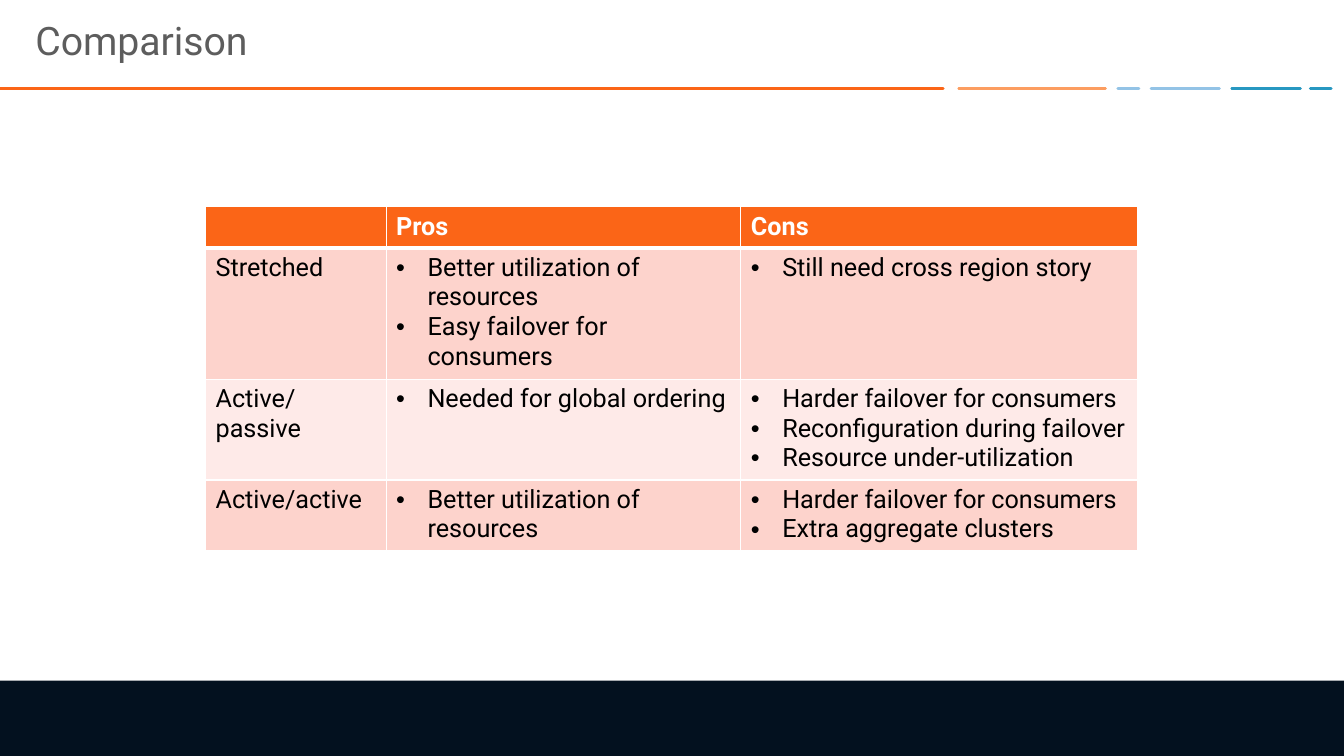
from lxml.etree import SubElement
from pptx import Presentation
from pptx.dml.color import RGBColor
from pptx.enum.shapes import MSO_CONNECTOR, MSO_SHAPE
from pptx.enum.text import MSO_ANCHOR
from pptx.oxml import parse_xml
from pptx.oxml.ns import nsdecls, qn
from pptx.util import Cm, Pt

COLORS = {
    "footer": "03111F", "orange": "FB6517", "light orange": "FC9D60",
    "light blue": "93C3E6", "teal": "2898C1", "title": "5D5D5D",
    "white": "FFFFFF", "black": "000000", "odd row": "FDD3CC", "even row": "FEEAE8",
}
TITLE_FONT = {"name": "Roboto", "size": Pt(28), "bold": False}
HEADER_FONT = {"name": "Roboto", "size": Pt(18), "bold": True}
BODY_FONT = {"name": "Roboto", "size": Pt(18), "bold": False}

# Start, end and colour of each dash under the title
DASHES = [
    (0, 23.77, "orange"), (24.16, 27.86, "light orange"),
    (28.17, 28.7, "light blue"), (29.01, 30.73, "light blue"),
    (31.04, 32.77, "teal"), (33.02, 33.55, "teal"),
]
COLUMN_WIDTHS = [4.55, 8.94, 10.01]
ROW_HEIGHTS = [1.04, 3.23, 2.49, 1.74]
HEADINGS = ["", "Pros", "Cons"]
STRATEGIES = [
    ("Stretched",
     ["Better utilization of resources", "Easy failover for consumers"],
     ["Still need cross region story"]),
    ("Active/passive",
     ["Needed for global ordering"],
     ["Harder failover for consumers", "Reconfiguration during failover",
      "Resource under-utilization"]),
    ("Active/active",
     ["Better utilization of resources"],
     ["Harder failover for consumers", "Extra aggregate clusters"]),
]


def rgb(color):
    return RGBColor.from_string(COLORS[color])


def format_font(paragraph, settings, color):
    for attribute, value in settings.items():
        setattr(paragraph.font, attribute, value)
    paragraph.font.color.rgb = rgb(color)


def add_footer(slide):
    footer = slide.shapes.add_shape(
        MSO_SHAPE.RECTANGLE, 0, Cm(17.15), Cm(33.87), Cm(1.9))
    footer.shadow.inherit = False
    footer.fill.solid()
    footer.fill.fore_color.rgb = rgb("footer")
    footer.line.fill.background()


def add_dash(slide, start, end, color):
    dash = slide.shapes.add_connector(
        MSO_CONNECTOR.STRAIGHT, Cm(start), Cm(2.23), Cm(end), Cm(2.23))
    dash.line.color.rgb = rgb(color)
    dash.line.width = Pt(2)
    dash.line._get_or_add_ln().set("cap", "rnd")
    SubElement(dash._element.spPr, qn("a:effectLst"))


def add_title(slide, text):
    title = slide.shapes.add_textbox(Cm(0.89), 0, Cm(32.13), Cm(2.16))
    frame = title.text_frame
    settings = {"word_wrap": True, "vertical_anchor": MSO_ANCHOR.MIDDLE,
                "margin_left": 0, "margin_right": 0}
    for attribute, value in settings.items():
        setattr(frame, attribute, value)
    paragraph = frame.paragraphs[0]
    paragraph.text = text
    paragraph.line_spacing = 0.9
    format_font(paragraph, TITLE_FONT, "title")


def add_bullet(paragraph):
    properties = paragraph._p.get_or_add_pPr()
    properties.set("marL", str(Cm(0.79)))
    properties.set("indent", str(-Cm(0.79)))
    SubElement(properties, qn("a:buFont"), typeface="Arial")
    SubElement(properties, qn("a:buChar"), char="•")


def add_borders(cell, top, bottom):
    properties = cell._tc.get_or_add_tcPr()
    widths = {"lnL": 1, "lnR": 1, "lnT": top, "lnB": bottom}
    for position, (side, width) in enumerate(widths.items()):
        properties.insert(position, parse_xml(
            f'<a:{side} {nsdecls("a")} w="{Pt(width)}"><a:solidFill>'
            f'<a:srgbClr val="{COLORS["white"]}"/></a:solidFill></a:{side}>'))


def fill_cell(cell, lines, fill, settings, color, bulleted):
    cell.fill.solid()
    cell.fill.fore_color.rgb = rgb(fill)
    cell.text = "\n".join(lines)
    for paragraph in cell.text_frame.paragraphs:
        if bulleted:
            add_bullet(paragraph)
        format_font(paragraph, settings, color)


def add_comparison(slide):
    comparison = slide.shapes.add_table(
        len(ROW_HEIGHTS), len(COLUMN_WIDTHS), Cm(5.18), Cm(5.21),
        Cm(sum(COLUMN_WIDTHS)), Cm(sum(ROW_HEIGHTS))).table
    for column, width in zip(comparison.columns, COLUMN_WIDTHS):
        column.width = Cm(width)
    for row, height in zip(comparison.rows, ROW_HEIGHTS):
        row.height = Cm(height)

    # Header row
    for column, heading in enumerate(HEADINGS):
        cell = comparison.cell(0, column)
        fill_cell(cell, [heading], "orange", HEADER_FONT, "white", False)
        add_borders(cell, 1, 3)

    # One row per strategy
    for row, (strategy, pros, cons) in enumerate(STRATEGIES, 1):
        fill = "odd row" if row % 2 else "even row"
        for column, lines in enumerate([[strategy], pros, cons]):
            cell = comparison.cell(row, column)
            fill_cell(cell, lines, fill, BODY_FONT, "black", column > 0)
            add_borders(cell, 3 if row == 1 else 1, 1)


def main():
    presentation = Presentation()
    presentation.slide_width = Cm(33.87)
    presentation.slide_height = Cm(19.05)
    slide = presentation.slides.add_slide(presentation.slide_layouts[6])
    add_footer(slide)
    for start, end, color in DASHES:
        add_dash(slide, start, end, color)
    add_title(slide, "Comparison")
    add_comparison(slide)
    presentation.save("out.pptx")


if __name__ == "__main__":
    main()
